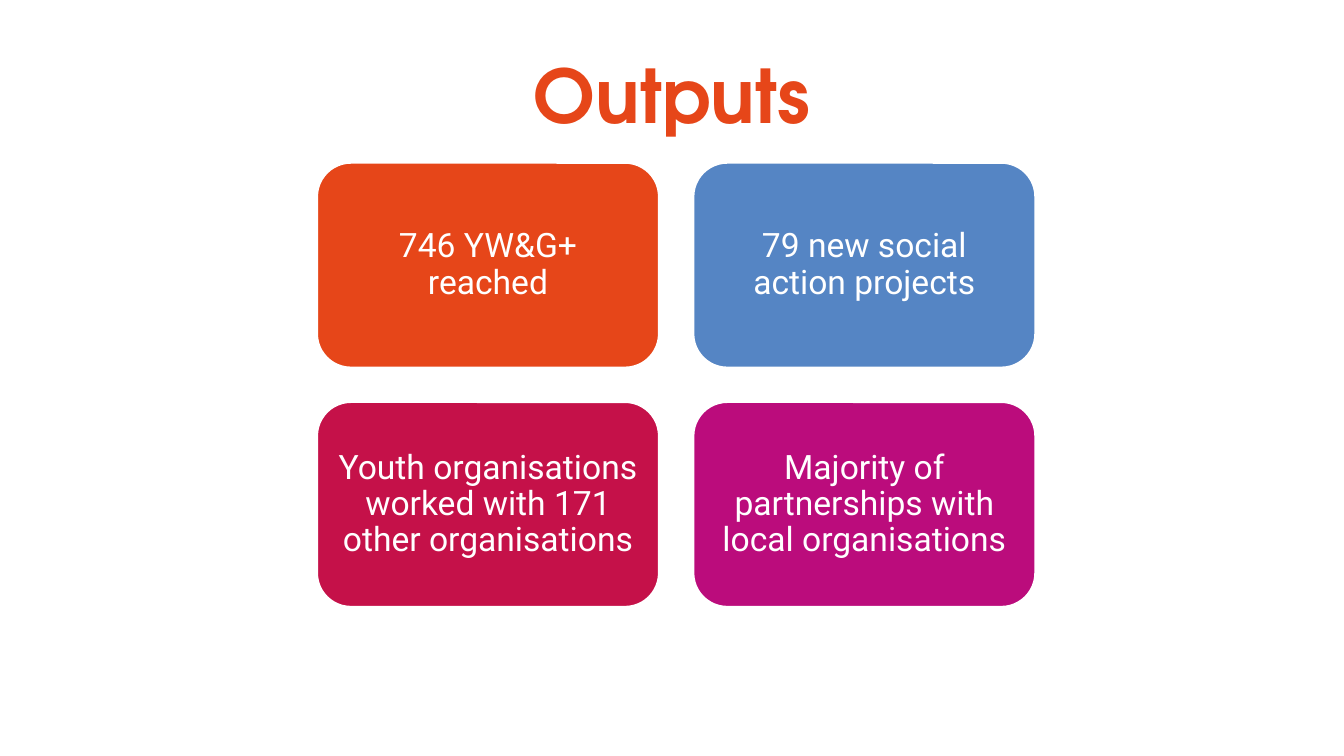
from pptx import Presentation
from pptx.dml.color import RGBColor
from pptx.enum.shapes import MSO_SHAPE
from pptx.enum.text import MSO_ANCHOR, PP_ALIGN
from pptx.util import Pt

TITLE = "Outputs"
CARDS = [
    ("746 YW&G+ reached", "E64619"),
    ("79 new social action projects", "5585C4"),
    ("Youth organisations worked with 171 other organisations", "C51149"),
    ("Majority of partnerships with local organisations", "BB0C7C"),
]
COLUMNS = 2
LEFT, TOP = 226.2, 116
CARD_W, CARD_H = 244.8, 146.9
GAP = 24
INSET = 7.2


def rgb(value):
    return RGBColor.from_string(value)


def set_text(sp, text, font, size, color, bold=False):
    tf = sp.text_frame
    tf.word_wrap = True
    tf.vertical_anchor = MSO_ANCHOR.MIDDLE
    p = tf.paragraphs[0]
    p.text = text
    p.alignment = PP_ALIGN.CENTER
    p.line_spacing = 0.9
    p.font.name = font
    p.font.size = Pt(size)
    p.font.bold = bold
    p.font.color.rgb = rgb(color)
    return tf


def add_card(s, index, text, fill):
    row, col = divmod(index, COLUMNS)
    sp = s.shapes.add_shape(
        MSO_SHAPE.ROUNDED_RECTANGLE,
        Pt(LEFT + col * (CARD_W + GAP)), Pt(TOP + row * (CARD_H + GAP)),
        Pt(CARD_W), Pt(CARD_H))
    sp.shadow.inherit = False
    sp.fill.solid()
    sp.fill.fore_color.rgb = rgb(fill)
    sp.line.color.rgb = rgb("FFFFFF")
    sp.line.width = Pt(2)
    tf = set_text(sp, text, "Roboto", 24, "FFFFFF")
    tf.margin_left = tf.margin_right = Pt(INSET)
    tf.margin_top = tf.margin_bottom = Pt(INSET)


def main():
    prs = Presentation()
    prs.slide_width, prs.slide_height = Pt(960), Pt(540)
    s = prs.slides.add_slide(prs.slide_layouts[5])

    title = s.shapes.title
    title.left, title.top = Pt(90.7), Pt(25.9)
    title.width, title.height = Pt(778.3), Pt(90)
    set_text(title, TITLE, "TeX Gyre Adventor", 52.8, "E64619", bold=True)

    for index, (text, fill) in enumerate(CARDS):
        add_card(s, index, text, fill)
    prs.save("out.pptx")


if __name__ == "__main__":
    main()
